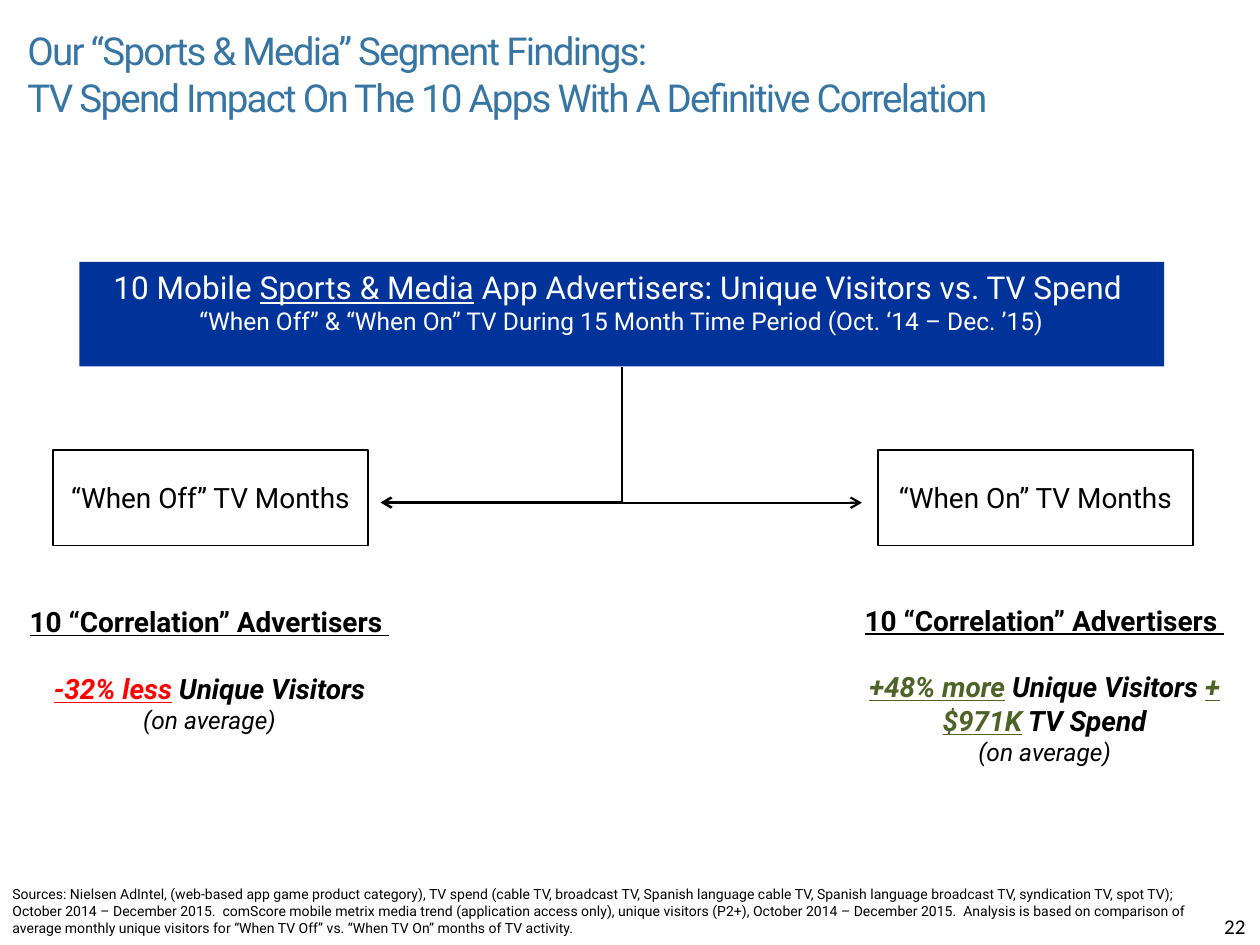
from lxml.etree import SubElement
from pptx import Presentation
from pptx.dml.color import RGBColor
from pptx.enum.shapes import MSO_CONNECTOR as Link, MSO_SHAPE as Shape
from pptx.enum.text import MSO_ANCHOR as Anchor, MSO_AUTO_SIZE as Fit, PP_ALIGN as Align
from pptx.oxml.ns import qn
from pptx.util import Cm, Pt

BLACK, WHITE, RED, GREEN = "000000", "FFFFFF", "FF0000", "4F6228"


def tint(color):
    return RGBColor.from_string(color)


def write(shape, paras, anchor=Anchor.TOP, align=Align.CENTER, color=BLACK, font="Roboto"):
    """Fill a shape with paragraphs of (size, space before, bold, italic, runs).

    Each run is (text, underline, colour), the colour None for the shape's own.
    """
    frame = shape.text_frame
    frame.word_wrap = True
    frame.auto_size = Fit.NONE
    frame.vertical_anchor = anchor
    for i, (size, gap, bold, slant, runs) in enumerate(paras):
        para = frame.add_paragraph() if i else frame.paragraphs[0]
        para.alignment = align
        para.space_before = Pt(gap)
        face = para.font
        face.name, face.size = font, Pt(size)
        face.bold, face.italic = bold, slant
        face.color.rgb = tint(color)
        for text, under, hue in runs:
            run = para.add_run()
            run.text = text
            if under:
                run.font.underline = True
            if hue:
                run.font.color.rgb = tint(hue)


deck = Presentation()
deck.slide_width, deck.slide_height = Cm(25.4), Cm(19.05)
slide = deck.slides.add_slide(deck.slide_layouts[5])
shapes = slide.shapes

# Title
title = shapes.title
title.left, title.top, title.width, title.height = Cm(0.3), Cm(0.76), Cm(21.31), Cm(1.45)
heads = ["Our “Sports & Media” Segment Findings:",
         "TV Spend Impact On The 10 Apps With A Definitive Correlation"]
write(title, [(22, 0, False, False, [(head, False, None)]) for head in heads],
      Anchor.MIDDLE, Align.LEFT, "3775A2")
for para in title.text_frame.paragraphs:
    for run in para.runs:
        run.font._element.set("spc", "-100")

# Banner and the two month boxes
banner = [
    (18, 0, False, False, [("10 Mobile ", False, None), ("Sports & Media", True, None),
                           (" App Advertisers: Unique Visitors vs. TV Spend ", False, None)]),
    (14, 0, False, False, [("“When Off” & “When On” TV During 15 Month Time Period "
                            "(Oct. ‘14 – Dec. ’15)", False, None)]),
]
off = [(16, 0, False, False, [("“When Off” TV Months", False, None)])]
on = [(16, 0, False, False, [("“When On” TV Months", False, None)])]
for x, y, w, h, fill, edge, color, anchor, paras in [
    (1.6, 5.28, 21.87, 2.11, "003399", None, WHITE, Anchor.TOP, banner),
    (1.07, 9.07, 6.35, 1.93, WHITE, BLACK, BLACK, Anchor.MIDDLE, off),
    (17.7, 9.07, 6.35, 1.93, WHITE, BLACK, BLACK, Anchor.MIDDLE, on),
]:
    box = shapes.add_shape(Shape.RECTANGLE, Cm(x), Cm(y), Cm(w), Cm(h))
    box.shadow.inherit = False
    box.fill.solid()
    box.fill.fore_color.rgb = tint(fill)
    if edge:
        box.line.color.rgb = tint(edge)
        box.line.width = Pt(0.75)
    else:
        box.line.fill.background()
    write(box, paras, anchor, color=color)

# Arrows: an elbow from the banner to the right, a straight one to the left
elbow = shapes.add_connector(Link.ELBOW, Cm(16.33), Cm(6.35), Cm(13.59), Cm(11.18))
props = elbow._element.spPr
props.find(qn("a:xfrm")).set("rot", str(270 * 60000))
props.find(qn("a:prstGeom")).set("prst", "bentConnector2")
arm = shapes.add_connector(Link.STRAIGHT, Cm(12.55), Cm(10.13), Cm(7.67), Cm(10.13))
for link, width in [(elbow, 1.25), (arm, 1.5)]:
    link.line.color.rgb = tint(BLACK)
    link.line.width = Pt(width)
    SubElement(link.line._get_or_add_ln(), qn("a:tailEnd"), type="arrow")
    SubElement(link._element.spPr, qn("a:effectLst"))

# Results under each box
less = [("-32% less", True, RED), (" ", False, None), ("Unique Visitors", False, None)]
more = [("+48% more", True, GREEN), (" ", False, None), ("Unique Visitors ", False, None),
        ("+$971K", True, GREEN), (" ", False, None), ("TV Spend", False, None)]
for x, y, w, h, runs in [(0.3, 11.86, 7.85, 3.28, less), (17.15, 12.32, 7.82, 2.97, more)]:
    note = shapes.add_textbox(Cm(x), Cm(y), Cm(w), Cm(h))
    write(note, [
        (16, 0, True, False, [("10 “Correlation” Advertisers ", True, None)]),
        (16, 19, True, True, runs),
        (14, 0, False, True, [("(on average)", False, None)]),
    ], Anchor.MIDDLE)

# Footer
source = (
    "Sources: Nielsen AdIntel, (web-based app game product category), TV spend (cable TV, "
    "broadcast TV, Spanish language cable TV, Spanish language broadcast TV, syndication TV, "
    "spot TV); October 2014 – December 2015.  comScore mobile metrix media trend (application "
    "access only), unique visitors (P2+), October 2014 – December 2015.  Analysis is based on "
    "comparison of average monthly unique visitors for “When TV Off” vs. “When TV On” months "
    "of TV activity."
)
foot = shapes.add_textbox(Cm(0), Cm(17.73), Cm(24.97), Cm(1.27))
write(foot, [(8, 0, False, False, [(source, False, None)])], align=Align.LEFT)
page = shapes.add_textbox(Cm(24.43), Cm(18.29), Cm(0.97), Cm(0.76))
write(page, [(12, 0, False, False, [("22", False, None)])], align=Align.LEFT, font="Calibri")
page.text_frame.word_wrap = False

deck.save("out.pptx")
